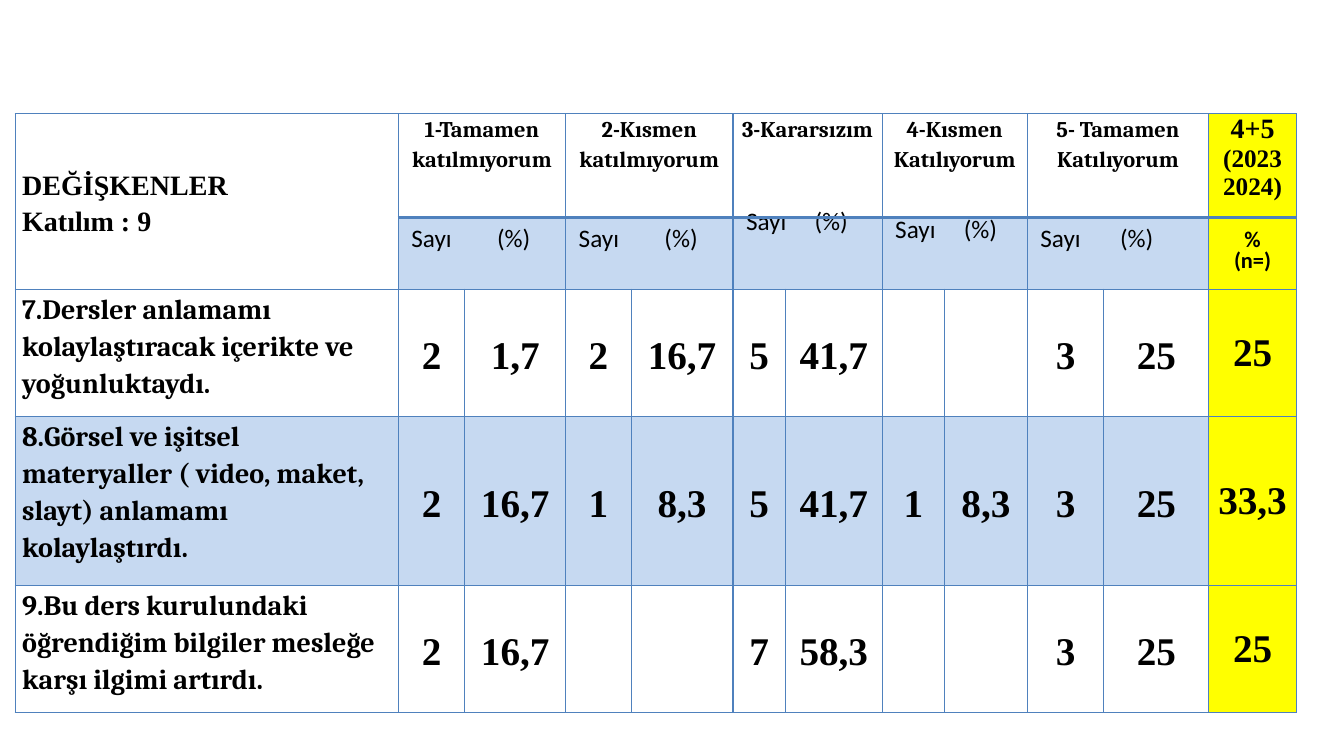
"""Builds a slide with a survey table of course evaluation answers."""
from lxml.etree import SubElement
from pptx import Presentation
from pptx.dml.color import RGBColor
from pptx.enum.text import MSO_ANCHOR as Anchor, PP_ALIGN as Align
from pptx.oxml.ns import qn
from pptx.util import Inches, Pt

BLACK = RGBColor(0x00, 0x00, 0x00)
YELLOW = RGBColor(0xFF, 0xFF, 0x00)
PALE_BLUE = RGBColor(0xC6, 0xD9, 0xF1)
BORDER = RGBColor(0x4F, 0x81, 0xBD)
SERIF, HEADING, SANS = "Times New Roman", "Cambria", "Calibri"

TITLE = ["DEĞİŞKENLER", "Katılım : 9"]
COUNT, PERCENT = "Sayı", "(%)"
# Each answer: heading, tab position of the percent label, space below the labels
ANSWERS = [
    ("1-Tamamen katılmıyorum", 0.85, 0.17),
    ("2-Kısmen katılmıyorum", 0.85, 0.17),
    ("3-Kararsızım", 0.68, 0.51),
    ("4-Kısmen Katılıyorum", 0.68, 0.34),
    ("5- Tamamen Katılıyorum", 0.79, 0.17),
]
TOTAL_HEADING = [("4+5", 20), ("(2023 2024)", 18)]
TOTAL_UNIT = ["%", "(n=)"]
QUESTIONS = [
    ("7.Dersler anlamamı kolaylaştıracak içerikte ve yoğunluktaydı.",
     ["2", "1,7", "2", "16,7", "5", "41,7", "", "", "3", "25"], "25"),
    ("8.Görsel ve işitsel materyaller ( video, maket, slayt) anlamamı kolaylaştırdı.",
     ["2", "16,7", "1", "8,3", "5", "41,7", "1", "8,3", "3", "25"], "33,3"),
    ("9.Bu ders kurulundaki öğrendiğim bilgiler mesleğe karşı ilgimi artırdı.",
     ["2", "16,7", "", "", "7", "58,3", "", "", "3", "25"], "25"),
]
COLUMN_WIDTHS = [3.8, 0.66, 1, 0.65, 1.01, 0.52, 0.96, 0.62, 0.82, 0.76, 1.04, 0.87]
ROW_HEIGHTS = [1.03, 0.71, 1.26, 1.68, 1.26]
TOTAL_COLUMN = len(COLUMN_WIDTHS) - 1


def write(cell, lines, size=18, font=SERIF, bold=True, align=Align.CENTER,
          anchor=Anchor.MIDDLE, spacing=1.15, margins=(0.07, 0, 0.07, 0), tab=None):
    """Write lines, each a text or a (text, size) pair, into a cell."""
    cell.vertical_anchor = anchor
    (cell.margin_left, cell.margin_top,
     cell.margin_right, cell.margin_bottom) = map(Inches, margins)
    for index, line in enumerate(lines):
        text, points = line if isinstance(line, tuple) else (line, size)
        frame = cell.text_frame
        para = frame.add_paragraph() if index else frame.paragraphs[0]
        para.alignment, para.line_spacing = align, spacing
        if tab:
            stops = SubElement(para._p.get_or_add_pPr(), qn("a:tabLst"))
            SubElement(stops, qn("a:tab"), pos=str(Inches(tab)), algn="l")
        span = para.add_run()
        span.text = text
        span.font.size, span.font.name, span.font.bold = Pt(points), font, bold
        span.font.color.rgb = BLACK


def style_cell(cell, fill, top, bottom):
    """Give a cell its borders, in points, and its fill."""
    properties = cell._tc.get_or_add_tcPr()
    for side, width in (("L", 1), ("R", 1), ("T", top), ("B", bottom)):
        line = SubElement(properties, qn(f"a:ln{side}"), w=str(Pt(width)))
        solid = SubElement(line, qn("a:solidFill"))
        SubElement(solid, qn("a:srgbClr"), val=str(BORDER))
    if fill is None:
        cell.fill.background()
    else:
        cell.fill.solid()
        cell.fill.fore_color.rgb = fill


def fill_for(row, column):
    """Return the fill of a cell, or None."""
    if column == TOTAL_COLUMN:
        return YELLOW
    return PALE_BLUE if row == 3 or (row == 1 and column) else None


def add_survey_table(page):
    """Add the sized and coloured table with its merged cells."""
    table = page.shapes.add_table(
        len(ROW_HEIGHTS), len(COLUMN_WIDTHS), Inches(0.15), Inches(1.13),
        Inches(sum(COLUMN_WIDTHS)), Inches(sum(ROW_HEIGHTS))).table
    table.first_row = table.horz_banding = False
    for column, width in zip(table.columns, COLUMN_WIDTHS):
        column.width = Inches(width)
    for row, height in zip(table.rows, ROW_HEIGHTS):
        row.height = Inches(height)
    for row in range(len(ROW_HEIGHTS)):
        for column in range(len(COLUMN_WIDTHS)):
            style_cell(table.cell(row, column), fill_for(row, column),
                       top=2.25 if row == 1 and column else 1,
                       bottom=2.25 if row == 0 and column else 1)
    table.cell(0, 0).merge(table.cell(1, 0))
    for column in range(1, TOTAL_COLUMN, 2):
        for row in (0, 1):
            table.cell(row, column).merge(table.cell(row, column + 1))
    return table


def main():
    """Build the deck and save it."""
    deck = Presentation()
    deck.slide_width, deck.slide_height = Inches(13.33), Inches(7.5)
    page = deck.slides.add_slide(deck.slide_layouts[6])
    table = add_survey_table(page)

    write(table.cell(0, 0), TITLE, size=20, align=Align.LEFT)
    for index, (heading, tab, below) in enumerate(ANSWERS):
        column = 1 + 2 * index
        write(table.cell(0, column), [heading], size=16, font=HEADING, anchor=Anchor.TOP)
        write(table.cell(1, column), [f"{COUNT}\t{PERCENT}"], font=SANS, bold=False,
              align=Align.LEFT, spacing=Pt(13), margins=(0.13, 0, 0.07, below), tab=tab)
    write(table.cell(0, TOTAL_COLUMN), TOTAL_HEADING, anchor=Anchor.TOP, spacing=1.0)
    write(table.cell(1, TOTAL_COLUMN), TOTAL_UNIT, size=16, font=SANS, spacing=Pt(15))

    for row, (question, values, total) in enumerate(QUESTIONS, start=2):
        write(table.cell(row, 0), [question], size=20, font=HEADING,
              align=Align.LEFT, anchor=Anchor.TOP)
        for column, value in enumerate(values, start=1):
            if value:
                write(table.cell(row, column), [value], size=28)
        write(table.cell(row, TOTAL_COLUMN), [total], size=28, spacing=1.0,
              margins=(0.01, 0.01, 0.01, 0))
    deck.save("out.pptx")


if __name__ == "__main__":
    main()
